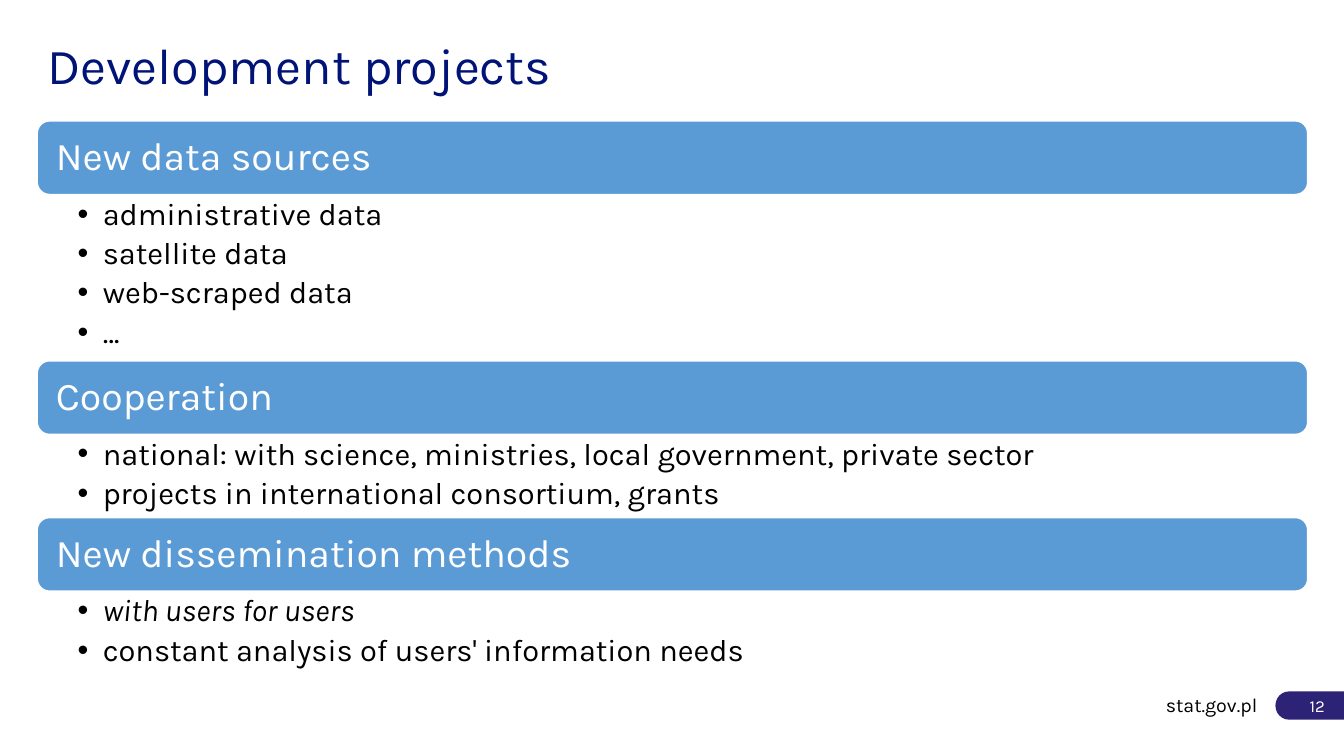
from pptx import Presentation
from pptx.dml.color import RGBColor
from pptx.enum.shapes import MSO_SHAPE
from pptx.enum.text import MSO_ANCHOR, MSO_AUTO_SIZE, PP_ALIGN
from pptx.oxml.ns import qn
from pptx.util import Inches, Pt
from lxml import etree

ROUNDED, PILL = MSO_SHAPE.ROUNDED_RECTANGLE, MSO_SHAPE.FLOWCHART_TERMINATOR
TOP, MIDDLE, BOTTOM = MSO_ANCHOR.TOP, MSO_ANCHOR.MIDDLE, MSO_ANCHOR.BOTTOM
LEFT, RIGHT = PP_ALIGN.LEFT, PP_ALIGN.RIGHT
NO_FIT = MSO_AUTO_SIZE.NONE

NAVY = RGBColor(0x00, 0x13, 0x77)
INDIGO = RGBColor(0x2C, 0x22, 0x76)
BLUE = RGBColor(0x5B, 0x9B, 0xD5)
WHITE = RGBColor(0xFF, 0xFF, 0xFF)
BLACK = RGBColor(0x00, 0x00, 0x00)

FONT = "Karla"
WIDTH, HEIGHT = 13.33, 7.5
MARGIN = 0.37
CONTENT_WIDTH = 12.6
BANNER_HEIGHT = 0.73
ROW_HEIGHT = 0.4125
USERS_MOTTO = "with users for users"
SECTIONS = [
    ("New data sources",
     ["administrative data", "satellite data", "web-scraped data", "…"]),
    ("Cooperation",
     ["national: with science, ministries, local government, private sector",
      "projects in international consortium, grants"]),
    ("New dissemination methods",
     [USERS_MOTTO, "constant analysis of users' information needs"]),
]


def inches(box):
    """Convert a left, top, width, height box to lengths."""
    return [Inches(length) for length in box]


def add_bullet(paragraph):
    """Give a paragraph a round bullet and a hanging indent."""
    properties = paragraph._p.get_or_add_pPr()
    properties.set("marL", str(Inches(0.25)))
    properties.set("indent", str(-Inches(0.25)))
    etree.SubElement(properties, qn("a:buFont")).set("typeface", "Arial")
    etree.SubElement(properties, qn("a:buChar")).set("char", "•")


def write(holder, lines, size, color, align=LEFT, anchor=MIDDLE, spacing=1.0,
          after=0, insets=(0.1, 0.05, 0.1, 0.05), bullets=False, italics=()):
    """Fill a shape with formatted paragraphs."""
    frame = holder.text_frame
    frame.word_wrap = True
    frame.auto_size = NO_FIT
    frame.vertical_anchor = anchor
    (frame.margin_left, frame.margin_top,
     frame.margin_right, frame.margin_bottom) = inches(insets)
    frame.text = "\n".join(lines)
    for paragraph, line in zip(frame.paragraphs, lines):
        if bullets:
            add_bullet(paragraph)
        paragraph.alignment = align
        paragraph.line_spacing = spacing
        paragraph.space_after = Pt(after)
        font = paragraph.runs[0].font
        font.name, font.size, font.italic = FONT, Pt(size), line in italics
        font.color.rgb = color


def add_block(slide, preset, box, fill, outline=None):
    """Add a flat filled shape."""
    block = slide.shapes.add_shape(preset, *inches(box))
    block.shadow.inherit = False
    block.fill.solid()
    block.fill.fore_color.rgb = fill
    if outline is None:
        block.line.fill.background()
    else:
        block.line.color.rgb = outline
        block.line.width = Pt(1)
    return block


def add_title(slide, box, wording):
    """Place and format the title placeholder."""
    title = slide.shapes.title
    title.left, title.top, title.width, title.height = inches(box)
    write(title, [wording], 36, NAVY, anchor=BOTTOM, spacing=0.9)


def add_section(slide, box, heading, points):
    """Add a banner with its bulleted points below."""
    left, top, width, height = box
    banner = add_block(slide, ROUNDED, (left, top, width, BANNER_HEIGHT), BLUE, WHITE)
    write(banner, [heading], 28, WHITE, spacing=0.9, insets=(0.15, 0.12, 0.15, 0.12))
    body = slide.shapes.add_textbox(
        *inches((left, top + BANNER_HEIGHT, width, height - BANNER_HEIGHT)))
    write(body, points, 22, BLACK, anchor=TOP, spacing=0.9, after=4.4,
          insets=(0.4, 0.04, 0.22, 0.04), bullets=True, italics=(USERS_MOTTO,))


def add_sections(slide, left, top, width):
    """Stack the sections, each as tall as its points need."""
    for heading, points in SECTIONS:
        height = BANNER_HEIGHT + ROW_HEIGHT * len(points)
        add_section(slide, (left, top, width, height), heading, points)
        top += height


def add_footer(slide, box, site, number):
    """Add the site address and the page number pill."""
    left, top, width, height = box
    page = add_block(slide, PILL, (left + width + 0.08, top + 0.16, 0.83, 0.28), INDIGO)
    write(page, [number], 12, WHITE, align=RIGHT, insets=(0.04, 0.05, 0.3, 0.05))
    address = slide.shapes.add_textbox(*inches(box))
    write(address, [site], 14, BLACK, align=RIGHT, insets=(0, 0.05, 0.1, 0.05))


def main():
    """Build and save the slide."""
    deck = Presentation()
    deck.slide_width, deck.slide_height = Inches(WIDTH), Inches(HEIGHT)
    slide = deck.slides.add_slide(deck.slide_layouts.get_by_name("Title Only"))
    add_title(slide, (MARGIN, 0.21, CONTENT_WIDTH, 0.79), "Development projects")
    add_sections(slide, MARGIN, 1.2, CONTENT_WIDTH)
    add_footer(slide, (2.79, 6.7, 9.78, 0.59), "stat.gov.pl", "12")
    deck.save("out.pptx")


if __name__ == "__main__":
    main()
